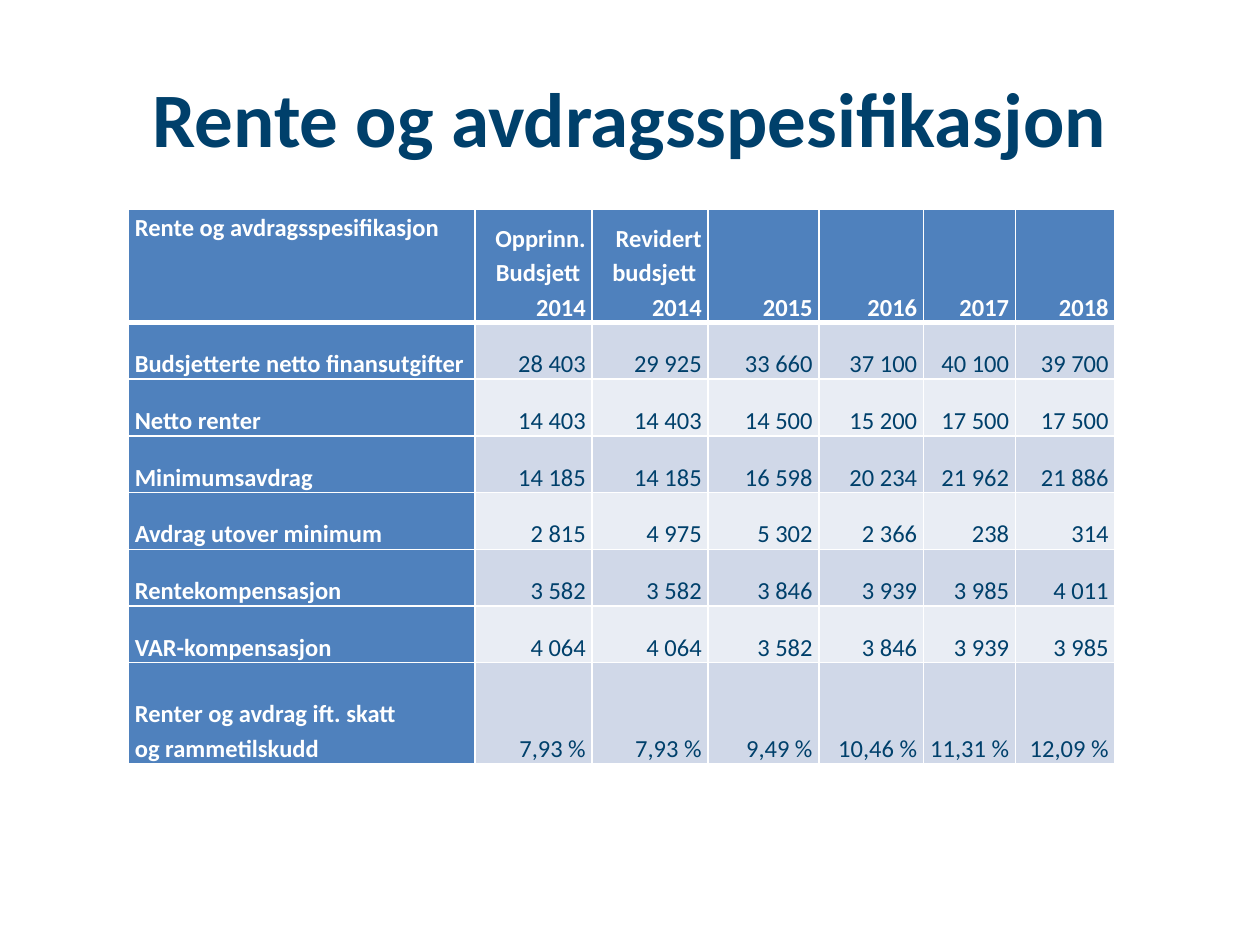
from lxml.etree import SubElement
from pptx import Presentation
from pptx.dml.color import RGBColor
from pptx.enum.text import MSO_ANCHOR as Anchor, PP_ALIGN as Align
from pptx.oxml.ns import qn
from pptx.util import Inches, Pt

TITLE = "Rente og avdragsspesifikasjon"
# "\v" breaks a line inside a paragraph, "\n" starts a new paragraph
ROWS = [
    [TITLE, "Opprinn.\vBudsjett \n2014", "Revidert\vbudsjett \n2014",
     "2015", "2016", "2017", "2018"],
    ["Budsjetterte netto finansutgifter",
     "28 403", "29 925", "33 660", "37 100", "40 100", "39 700"],
    ["Netto renter", "14 403", "14 403", "14 500", "15 200", "17 500", "17 500"],
    ["Minimumsavdrag", "14 185", "14 185", "16 598", "20 234", "21 962", "21 886"],
    ["Avdrag utover minimum", "2 815", "4 975", "5 302", "2 366", "238", "314"],
    ["Rentekompensasjon", "3 582", "3 582", "3 846", "3 939", "3 985", "4 011"],
    ["VAR-kompensasjon", "4 064", "4 064", "3 582", "3 846", "3 939", "3 985"],
    ["Renter og avdrag ift. skatt \vog rammetilskudd",
     "7,93 %", "7,93 %", "9,49 %", "10,46 %", "11,31 %", "12,09 %"],
]
COLUMN_WIDTHS = [2.75, 0.93, 0.92, 0.88, 0.83, 0.73, 0.79]
ROW_HEIGHTS = [0.9] + [0.45] * 6 + [0.8]
COLORS = {"navy": "00406B", "white": "FFFFFF", "header": "4F81BD",
          "odd": "D0D8E8", "even": "E9EDF4"}
FONT = "Calibri"


def color(name):
    return RGBColor.from_string(COLORS[name])


def style_text(frame, size, color_name, bold, align, spacing=None):
    for para in frame.paragraphs:
        para.alignment = align
        if spacing:
            para.line_spacing = spacing
        for span in para.runs:
            span.font.name = FONT
            span.font.size = Pt(size)
            span.font.bold = bold
            span.font.color.rgb = color(color_name)


def add_borders(cell, row):
    """White rules, with a heavy one under the header row."""
    props = cell._tc.get_or_add_tcPr()
    widths = {"lnL": 1, "lnR": 1, "lnT": 3 if row == 1 else 1,
              "lnB": 3 if row == 0 else 1}
    for index, (side, width) in enumerate(widths.items()):
        line = SubElement(props, qn(f"a:{side}"), w=str(Pt(width)))
        fill = SubElement(line, qn("a:solidFill"))
        SubElement(fill, qn("a:srgbClr"), val=COLORS["white"])
        props.insert(index, line)  # borders come before the fill


def fill_cell(cell, text, row, column):
    heading = row == 0 or column == 0
    cell.margin_left = cell.margin_right = Inches(0.05)
    cell.margin_top = cell.margin_bottom = 0
    cell.vertical_anchor = Anchor.TOP if row == column == 0 else Anchor.BOTTOM
    cell.fill.solid()
    cell.fill.fore_color.rgb = color(
        "header" if heading else "odd" if row % 2 else "even")
    cell.text_frame.text = text
    style_text(cell.text_frame, 14, "white" if heading else "navy", heading,
               Align.RIGHT if column else Align.LEFT, 1.15)
    add_borders(cell, row)


deck = Presentation()
deck.slide_width, deck.slide_height = Inches(10), Inches(7.5)
page = deck.slides.add_slide(deck.slide_layouts[6])

# Title
box = page.shapes.add_textbox(Inches(0.5), Inches(0.3), Inches(9), Inches(1.25))
box.text_frame.word_wrap = True
box.text_frame.vertical_anchor = Anchor.MIDDLE
box.text_frame.text = TITLE
style_text(box.text_frame, 44, "navy", True, Align.CENTER)

# Interest and instalment table
table = page.shapes.add_table(
    len(ROWS), len(COLUMN_WIDTHS), Inches(1.02), Inches(1.66),
    Inches(sum(COLUMN_WIDTHS)), Inches(sum(ROW_HEIGHTS))).table
for table_column, width in zip(table.columns, COLUMN_WIDTHS):
    table_column.width = Inches(width)
for table_row, height in zip(table.rows, ROW_HEIGHTS):
    table_row.height = Inches(height)
for row, texts in enumerate(ROWS):
    for column, text in enumerate(texts):
        fill_cell(table.cell(row, column), text, row, column)

deck.save("out.pptx")
